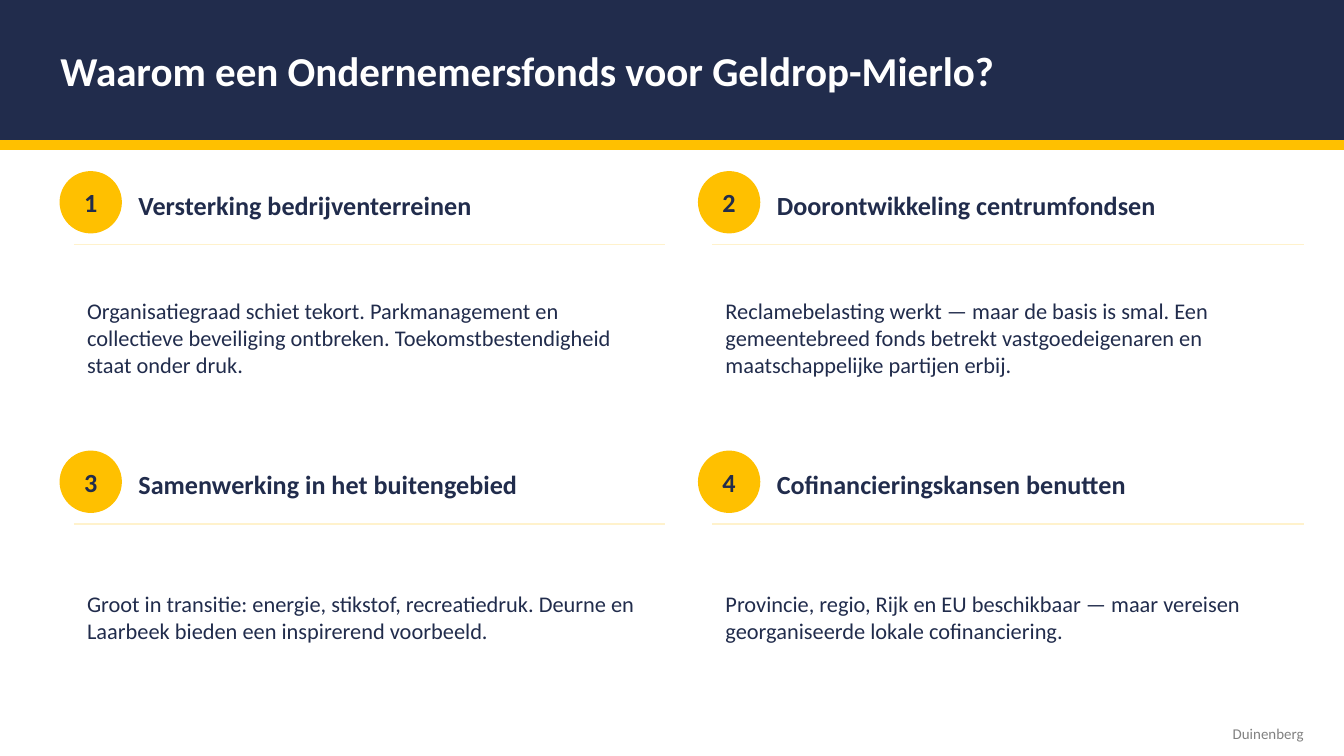
from lxml import etree
from pptx import Presentation
from pptx.dml.color import RGBColor
from pptx.enum.shapes import MSO_CONNECTOR, MSO_SHAPE
from pptx.enum.text import MSO_ANCHOR, PP_ALIGN
from pptx.oxml.ns import qn
from pptx.util import Inches, Pt

NAVY = RGBColor(0x21, 0x2C, 0x4C)
GOLD = RGBColor(0xFF, 0xC0, 0x00)
CREAM = RGBColor(0xFF, 0xF2, 0xCC)
GREY = RGBColor(0x80, 0x80, 0x80)
WHITE = RGBColor(0xFF, 0xFF, 0xFF)

RECTANGLE, OVAL = MSO_SHAPE.RECTANGLE, MSO_SHAPE.OVAL
STRAIGHT = MSO_CONNECTOR.STRAIGHT
MIDDLE = MSO_ANCHOR.MIDDLE
LEFT, CENTER, RIGHT = PP_ALIGN.LEFT, PP_ALIGN.CENTER, PP_ALIGN.RIGHT

FONT = "Calibri"
COLUMNS = 100  # square grid cells across the slide
ASPECT = 9 / 16

# Two by two cards, measured in grid cells
CARD_LEFT, CARD_TOP = 4.5, 12.8
CARD_STEP_X, CARD_STEP_Y = 47.5, 20.8
BADGE = 4.5

REASONS = [
    ("Versterking bedrijventerreinen",
     "Organisatiegraad schiet tekort. Parkmanagement en collectieve beveiliging "
     "ontbreken. Toekomstbestendigheid staat onder druk."),
    ("Doorontwikkeling centrumfondsen",
     "Reclamebelasting werkt — maar de basis is smal. Een gemeentebreed fonds "
     "betrekt vastgoedeigenaren en maatschappelijke partijen erbij."),
    ("Samenwerking in het buitengebied",
     "Groot in transitie: energie, stikstof, recreatiedruk. Deurne en Laarbeek "
     "bieden een inspirerend voorbeeld."),
    ("Cofinancieringskansen benutten",
     "Provincie, regio, Rijk en EU beschikbaar — maar vereisen "
     "georganiseerde lokale cofinanciering."),
]


def write(frame, text, size=12, color=NAVY, bold=False, align=LEFT, inset=True):
    """Fill a text frame with one formatted paragraph, centred vertically."""
    frame.word_wrap = True
    frame.vertical_anchor = MIDDLE
    if not inset:
        frame.margin_left = frame.margin_right = 0
        frame.margin_top = frame.margin_bottom = 0
    para = frame.paragraphs[0]
    para.alignment = align
    span = para.add_run()
    span.text = text
    span.font.name = FONT
    span.font.size = Pt(size)
    span.font.bold = bold
    span.font.color.rgb = color


class SlideBuilder:
    """Holds the current page and its grid; lengths are in grid cells."""

    def __init__(self, deck):
        self.cell = deck.slide_width / COLUMNS
        self.page = deck.slides.add_slide(deck.slide_layouts[6])

    def lengths(self, *cells):
        return [round(count * self.cell) for count in cells]

    def shape(self, kind, left, top, width, height, color):
        shape = self.page.shapes.add_shape(
            kind, *self.lengths(left, top, width, height))
        shape.shadow.inherit = False
        shape.fill.solid()
        shape.fill.fore_color.rgb = color
        shape.line.color.rgb = color
        shape.line.width = Pt(1)
        return shape

    def text(self, text, left, top, width, height, **style):
        box = self.page.shapes.add_textbox(
            *self.lengths(left, top, width, height))
        write(box.text_frame, text, **style)

    def rule(self, left, top, width, color):
        line = self.page.shapes.add_connector(
            STRAIGHT, *self.lengths(left, top, left + width, top))
        line.line.color.rgb = color
        line.line.width = Pt(1)
        etree.SubElement(line._element.spPr, qn("a:effectLst"))

    def card(self, number, heading, body, left, top):
        badge = self.shape(OVAL, left, top, BADGE, BADGE, GOLD)
        write(badge.text_frame, str(number), size=14, bold=True,
              align=CENTER, inset=False)
        self.text(heading, left + 5.8, top + 0.2, 40.5, BADGE,
                  size=14, bold=True, inset=False)
        self.rule(left + 1, top + 5.4, 44, CREAM)
        self.text(body, left + 1, top + 6.2, 44, 12.2)


def main():
    deck = Presentation()
    deck.slide_width = Inches(10)
    deck.slide_height = round(deck.slide_width * ASPECT)
    slide = SlideBuilder(deck)

    # Title band
    slide.shape(RECTANGLE, 0, 0, COLUMNS, 10.5, NAVY)
    slide.shape(RECTANGLE, 0, 10.5, COLUMNS, 0.6, GOLD)
    slide.text("Waarom een Ondernemersfonds voor Geldrop-Mierlo?",
               4.5, 0.8, 91, 8.9, size=22, color=WHITE, bold=True, inset=False)

    # Footer
    slide.text("Duinenberg", 78, 53.5, 20, 2.2, size=8, color=GREY, align=RIGHT)

    # Numbered reasons
    for index, (heading, body) in enumerate(REASONS):
        row, column = divmod(index, 2)
        slide.card(index + 1, heading, body,
                   CARD_LEFT + column * CARD_STEP_X,
                   CARD_TOP + row * CARD_STEP_Y)

    deck.save("out.pptx")


if __name__ == "__main__":
    main()
